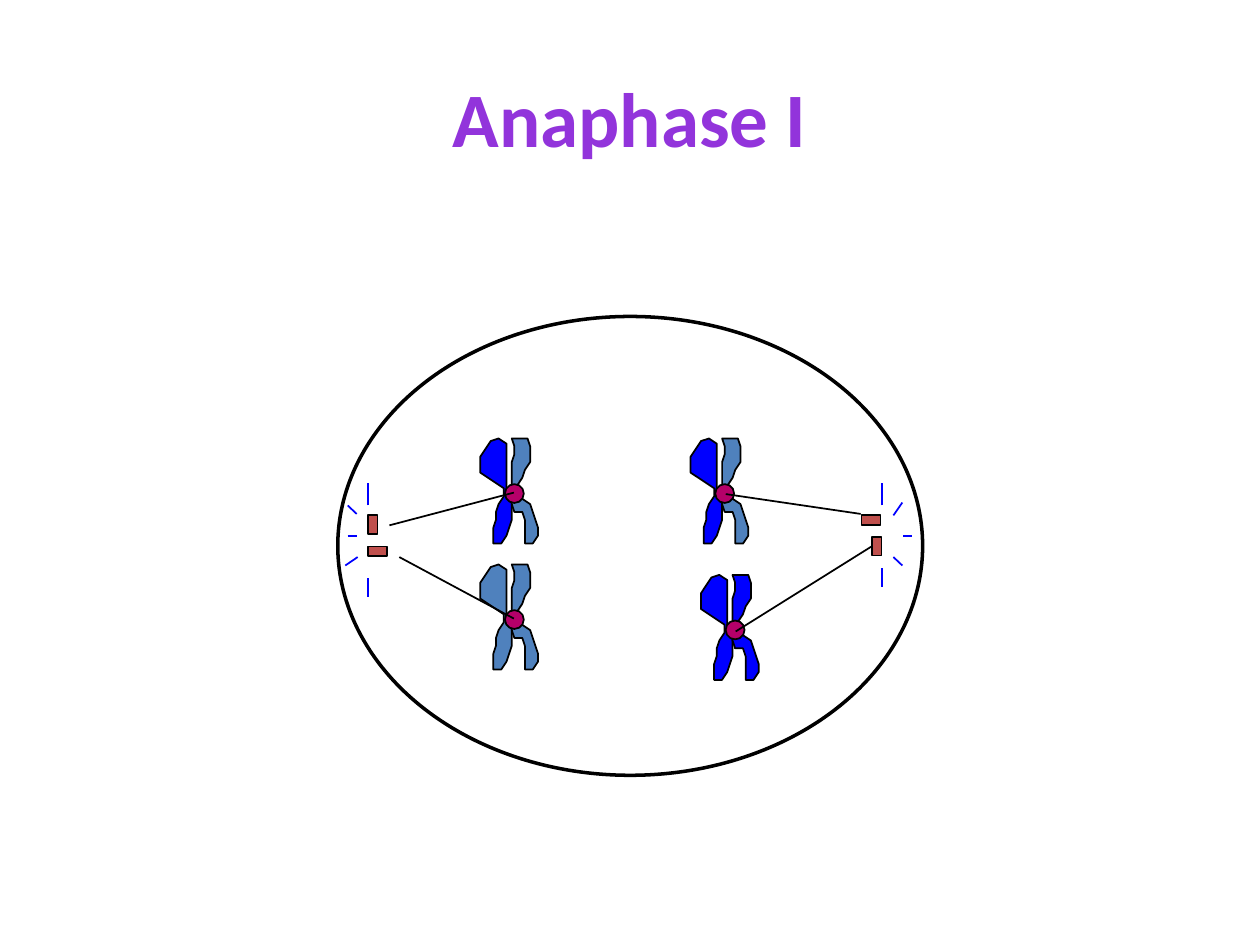
"""Build a slide showing a cell in anaphase I."""
from typing import NamedTuple

from lxml.etree import SubElement
from pptx import Presentation
from pptx.dml.color import RGBColor
from pptx.enum.shapes import MSO_CONNECTOR as Link, MSO_SHAPE as Kind
from pptx.enum.text import MSO_ANCHOR as Anchor, PP_ALIGN as Align
from pptx.oxml.ns import qn
from pptx.util import Cm, Pt

BLACK, WHITE, BLUE, STEEL = "000000", "FFFFFF", "0000FF", "4F81BD"
RED, PINK, PURPLE = "C0504D", "B50069", "9234DB"
UNIT = Cm(2.54) / 48
DISC = 0.38
LONG, SHORT = 0.38, 0.19

LEFT = [
    (0, 0), (-3, -1), (-3, -19), (-6, -21), (-9, -20), (-11, -17), (-13, -14),
    (-13, -8), (-10, -6), (-7, -4), (-4, -2), (-4, 1), (-6, 4), (-7, 7),
    (-7, 10), (-8, 13), (-8, 19), (-5, 19), (-3, 16), (-2, 13), (-1, 10),
    (-1, 1),
]
RIGHT = [
    (0, 0), (-1, -3), (-1, -12), (0, -15), (0, -18), (-1, -21), (5, -21),
    (6, -18), (6, -12), (4, -9), (3, -6), (1, -3), (0, 0), (3, 2), (6, 4),
    (7, 7), (8, 10), (9, 13), (9, 16), (7, 19), (4, 19), (4, 10), (3, 7),
    (0, 7), (-1, 4), (-1, 1),
]


class Box(NamedTuple):
    x: float
    y: float
    w: float
    h: float


class Pair(NamedTuple):
    x: float
    y: float
    left: str
    right: str


class Line(NamedTuple):
    x1: float
    y1: float
    x2: float
    y2: float


CELL = Box(6.81, 6.38, 11.79, 9.25)
RODS = [
    Box(7.42, 10.39, SHORT, LONG),
    Box(17.37, 10.39, LONG, SHORT),
    Box(7.42, 11.02, LONG, SHORT),
    Box(17.58, 10.82, SHORT, LONG),
]
PAIRS = [
    Pair(10.37, 12.49, STEEL, STEEL),
    Pair(14.61, 9.95, BLUE, STEEL),
    Pair(10.37, 9.95, BLUE, STEEL),
    Pair(14.82, 12.7, BLUE, BLUE),
]
RAYS = [
    Line(7.21, 11.23, 6.96, 11.4),
    Line(7.01, 10.8, 7.19, 10.8),
    Line(7.01, 10.19, 7.19, 10.36),
    Line(7.42, 10.19, 7.42, 9.73),
    Line(7.42, 11.66, 7.42, 12.04),
    Line(17.78, 10.19, 17.78, 9.73),
    Line(18.01, 10.39, 18.19, 10.13),
    Line(18.21, 10.8, 18.39, 10.8),
    Line(18.01, 11.23, 18.19, 11.4),
    Line(17.78, 11.46, 17.78, 11.84),
]
FIBRES = [
    Line(7.85, 10.59, 10.36, 9.93),
    Line(8.05, 11.23, 10.36, 12.47),
    Line(14.63, 9.96, 17.35, 10.36),
    Line(14.83, 12.73, 17.58, 11.01),
]


def tint(code: str) -> RGBColor:
    """Turn a hex string into a colour."""
    return RGBColor.from_string(code)


def style(shape, fill: str, width: float = 1):
    """Give a shape a flat fill and a black outline."""
    shape.shadow.inherit = False
    shape.fill.solid()
    shape.fill.fore_color.rgb = tint(fill)
    shape.line.color.rgb = tint(BLACK)
    shape.line.width = Pt(width)
    return shape


def draw_box(shapes, kind: Kind, box: Box, fill: str, width: float = 1):
    """Draw a preset shape in its box."""
    shape = shapes.add_shape(kind, *map(Cm, box))
    return style(shape, fill, width)


def draw_arm(shapes, pair: Pair, points: list, fill: str) -> None:
    """Draw one chromatid around the joint of its pair."""
    pen = shapes.build_freeform(*points[0], scale=UNIT)
    pen.add_line_segments(points[1:], close=True)
    style(pen.convert_to_shape(Cm(pair.x), Cm(pair.y)), fill)


def draw_pair(shapes, pair: Pair) -> None:
    """Draw two chromatids and the centromere that joins them."""
    draw_arm(shapes, pair, LEFT, pair.left)
    draw_arm(shapes, pair, RIGHT, pair.right)
    disc = Box(pair.x - DISC / 2, pair.y - DISC / 2, DISC, DISC)
    draw_box(shapes, Kind.OVAL, disc, PINK)


def draw_line(shapes, line: Line, color: str):
    """Draw a thin straight line without a shadow."""
    link = shapes.add_connector(Link.STRAIGHT, *map(Cm, line))
    link.line.color.rgb = tint(color)
    link.line.width = Pt(1)
    SubElement(link._element.spPr, qn("a:effectLst"))
    return link


def draw_title(shapes, text: str) -> None:
    """Write the centred heading."""
    frame = shapes.add_textbox(Cm(1.27), Cm(0.76), Cm(22.86), Cm(3.18)).text_frame
    frame.word_wrap = True
    frame.vertical_anchor = Anchor.MIDDLE
    para = frame.paragraphs[0]
    para.alignment = Align.CENTER
    run = para.add_run()
    run.text = text
    font = run.font
    font.name, font.size, font.bold = "Calibri", Pt(44), True
    font.color.rgb = tint(PURPLE)


def main() -> None:
    """Build and save the slide."""
    deck = Presentation()
    deck.slide_width, deck.slide_height = Cm(25.4), Cm(19.05)
    shapes = deck.slides.add_slide(deck.slide_layouts[6]).shapes
    draw_title(shapes, "Anaphase I")
    draw_box(shapes, Kind.OVAL, CELL, WHITE, 2)
    rods = [draw_box(shapes, Kind.RECTANGLE, rod, RED) for rod in RODS]
    for pair in PAIRS:
        draw_pair(shapes, pair)
    for ray in RAYS:
        draw_line(shapes, ray, BLUE)
    links = [draw_line(shapes, fibre, BLACK) for fibre in FIBRES]
    links[-1].end_connect(rods[-1], 1)
    deck.save("out.pptx")


if __name__ == "__main__":
    main()
